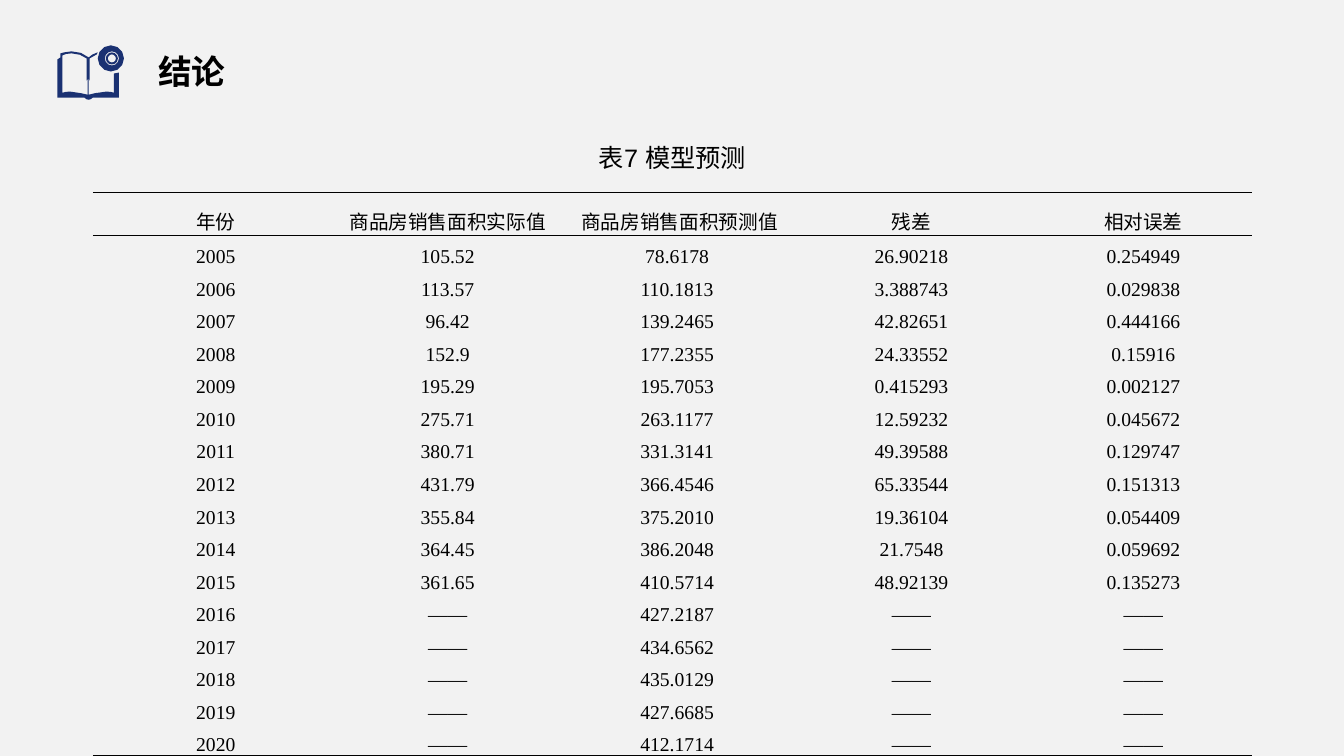
from dataclasses import dataclass
from math import cos, pi, sin

from lxml.etree import SubElement
from pptx import Presentation
from pptx.dml.color import RGBColor
from pptx.enum.text import MSO_ANCHOR, PP_ALIGN
from pptx.oxml.ns import qn
from pptx.util import Inches, Pt

Point = tuple[float, float]


@dataclass(frozen=True)
class Theme:
    background: str = "F2F2F2"
    ink: str = "000000"
    icon: str = "1A3172"
    heading_font: str = "Arial"
    table_font: str = "Times New Roman"
    title_size: int = 24
    caption_size: int = 18
    table_size: int = 14
    thick_rule: float = 1.5
    thin_rule: float = 1.0


@dataclass(frozen=True)
class Label:
    text: str
    box: tuple[float, float, float, float]
    size: int
    bold: bool
    align: PP_ALIGN
    anchor: MSO_ANCHOR
    line_spacing: float


@dataclass(frozen=True)
class Contour:
    """A start point, then lines (one point) or cubic curves (three points)."""
    start: Point
    segments: tuple[tuple[Point, ...], ...]


@dataclass(frozen=True)
class Circle:
    center: Point
    radius: float


@dataclass(frozen=True)
class Forecast:
    year: str
    actual: str
    predicted: str
    residual: str = "——"
    error: str = "——"

    def cells(self) -> tuple[str, ...]:
        return self.year, self.actual, f"{self.predicted} ", self.residual, self.error


THEME = Theme()
NO_STYLE = "{2D5ABB26-0587-4C30-8999-92F81FD0307C}"
ROW_HEIGHT = 0.26

LABELS = (
    Label("结论", (1.47, 0.23, 11.86, 0.73), THEME.title_size, True,
          PP_ALIGN.LEFT, MSO_ANCHOR.BOTTOM, 0.9),
    Label("表7 模型预测", (4.24, 1.22, 4.86, 0.69), THEME.caption_size, False,
          PP_ALIGN.CENTER, MSO_ANCHOR.MIDDLE, 1.0),
)

HEADERS = ("年份", "商品房销售面积实际值", "商品房销售面积预测值", "残差", "相对误差")
FORECASTS = (
    Forecast("2005", "105.52", "78.6178", "26.90218", "0.254949"),
    Forecast("2006", "113.57", "110.1813", "3.388743", "0.029838"),
    Forecast("2007", "96.42", "139.2465", "42.82651", "0.444166"),
    Forecast("2008", "152.9", "177.2355", "24.33552", "0.15916"),
    Forecast("2009", "195.29", "195.7053", "0.415293", "0.002127"),
    Forecast("2010", "275.71", "263.1177", "12.59232", "0.045672"),
    Forecast("2011", "380.71", "331.3141", "49.39588", "0.129747"),
    Forecast("2012", "431.79", "366.4546", "65.33544", "0.151313"),
    Forecast("2013", "355.84", "375.2010", "19.36104", "0.054409"),
    Forecast("2014", "364.45", "386.2048", "21.7548", "0.059692"),
    Forecast("2015", "361.65", "410.5714", "48.92139", "0.135273"),
    Forecast("2016", "——", "427.2187"),
    Forecast("2017", "——", "434.6562"),
    Forecast("2018", "——", "435.0129"),
    Forecast("2019", "——", "427.6685"),
    Forecast("2020", "——", "412.1714"),
)

# Book icon: left page cut-out, then the outer outline, then the disc rings
LEFT_PAGE = Contour((0.71, 0.53), (
    ((0.67, 0.53), (0.63, 0.54), (0.62, 0.55)), ((0.62, 0.92),),
    ((0.64, 0.91), (0.67, 0.91), (0.7, 0.91)),
    ((0.77, 0.91), (0.85, 0.94), (0.87, 0.94)),
    ((0.87, 0.78),), ((0.86, 0.8),), ((0.86, 0.58),),
    ((0.82, 0.55), (0.77, 0.53), (0.71, 0.53)),
))
BOOK = Contour((0.71, 0.51), (
    ((0.78, 0.51), (0.83, 0.53), (0.88, 0.57)),
    ((0.9, 0.55), (0.93, 0.53), (0.97, 0.52)), ((0.96, 0.54),),
    ((0.94, 0.55), (0.91, 0.57), (0.89, 0.58)),
    ((0.89, 0.8),), ((0.88, 0.78),), ((0.88, 0.94),),
    ((0.9, 0.94), (0.97, 0.91), (1.05, 0.91)),
    ((1.08, 0.91), (1.11, 0.91), (1.13, 0.92)),
    ((1.13, 0.73),), ((1.18, 0.72),), ((1.18, 0.97),), ((0.92, 0.97),),
    ((0.91, 0.98), (0.89, 0.99), (0.88, 0.99)),
    ((0.86, 0.99), (0.85, 0.98), (0.84, 0.97)),
    ((0.57, 0.97),), ((0.57, 0.59),), ((0.6, 0.57),), ((0.6, 0.53),),
    ((0.61, 0.53), (0.65, 0.51), (0.71, 0.51)),
))
DISC = (Circle((1.1, 0.58), 0.13),
        *(Circle((1.11, 0.58), radius) for radius in (0.07, 0.06, 0.04)))


def contour_points(contour: Contour, steps: int = 2) -> list[Point]:
    points = [contour.start]
    for segment in contour.segments:
        if len(segment) == 1:
            points.append(segment[0])
            continue
        controls = (points[-1], *segment)
        for step in range(1, steps + 1):
            t = step / steps
            weights = ((1 - t) ** 3, 3 * t * (1 - t) ** 2, 3 * t * t * (1 - t), t ** 3)
            points.append(tuple(sum(weight * control[axis] for weight, control
                                    in zip(weights, controls)) for axis in (0, 1)))
    return points


def circle_points(circle: Circle, steps: int = 12) -> list[Point]:
    x, y = circle.center
    angles = [2 * pi * step / steps for step in range(steps)]
    return [(x + circle.radius * cos(angle), y + circle.radius * sin(angle))
            for angle in angles]


def draw_icon(slide) -> None:
    outlines = [contour_points(LEFT_PAGE), contour_points(BOOK), *map(circle_points, DISC)]
    builder = slide.shapes.build_freeform(Inches(BOOK.start[0]), Inches(BOOK.start[1]))
    for outline in outlines:
        corners = [(Inches(x), Inches(y)) for x, y in outline]
        builder.move_to(*corners[0])
        builder.add_line_segments(corners[1:], close=True)
    shape = builder.convert_to_shape()
    shape.shadow.inherit = False
    shape.fill.solid()
    shape.fill.fore_color.rgb = RGBColor.from_string(THEME.icon)
    shape.line.fill.background()


def write_text(text_frame, text: str, *, font: str, size: int, align: PP_ALIGN,
               line_spacing: float, bold: bool = False, indent: float = 0) -> None:
    text_frame.word_wrap = True
    paragraph = text_frame.paragraphs[0]
    paragraph.alignment, paragraph.line_spacing = align, line_spacing
    if indent:
        paragraph._p.get_or_add_pPr().set("indent", str(Inches(indent)))
    run = paragraph.add_run()
    run.text = text
    run.font.name, run.font.size, run.font.bold = font, Pt(size), bold
    run.font.color.rgb = RGBColor.from_string(THEME.ink)


def draw_label(slide, label: Label) -> None:
    shape = slide.shapes.add_textbox(*map(Inches, label.box))
    shape.text_frame.vertical_anchor = label.anchor
    write_text(shape.text_frame, label.text, font=THEME.heading_font, size=label.size,
               align=label.align, line_spacing=label.line_spacing, bold=label.bold)


def set_borders(cell, widths: dict[str, float]) -> None:
    for side in ("lnL", "lnR", "lnT", "lnB"):
        line = SubElement(cell._tc.get_or_add_tcPr(), qn(f"a:{side}"))
        if side in widths:
            line.set("w", str(Pt(widths[side])))
            SubElement(SubElement(line, qn("a:solidFill")), qn("a:srgbClr"), val=THEME.ink)
        else:
            SubElement(line, qn("a:noFill"))


def draw_table(slide) -> None:
    rows = [HEADERS, *(forecast.cells() for forecast in FORECASTS)]
    frame = slide.shapes.add_table(len(rows), len(HEADERS), Inches(0.92), Inches(1.91),
                                   Inches(11.5), Inches(ROW_HEIGHT * len(rows)))
    table = frame.table
    table.first_row = table.horz_banding = False
    table._tbl.tblPr.find(qn("a:tableStyleId")).text = NO_STYLE
    rules = {0: {"lnT": THEME.thick_rule, "lnB": THEME.thin_rule},
             1: {"lnT": THEME.thin_rule},
             len(rows) - 1: {"lnB": THEME.thick_rule}}
    for row_index, texts in enumerate(rows):
        for column_index, text in enumerate(texts):
            cell = table.cell(row_index, column_index)
            cell.margin_left = cell.margin_right = Inches(0.07)
            cell.margin_top = cell.margin_bottom = 0
            cell.vertical_anchor = MSO_ANCHOR.MIDDLE
            set_borders(cell, rules.get(row_index, {}))
            cell.fill.background()
            write_text(cell.text_frame, text, font=THEME.table_font, size=THEME.table_size,
                       align=PP_ALIGN.CENTER, line_spacing=1.5, indent=0.14)
    frame.height = Inches(5.24)


def main() -> None:
    presentation = Presentation()
    presentation.slide_width, presentation.slide_height = Inches(13.33), Inches(7.5)
    slide = presentation.slides.add_slide(presentation.slide_layouts[6])
    slide.background.fill.solid()
    slide.background.fill.fore_color.rgb = RGBColor.from_string(THEME.background)
    draw_icon(slide)
    draw_table(slide)
    for label in LABELS:
        draw_label(slide, label)
    presentation.save("out.pptx")


if __name__ == "__main__":
    main()
